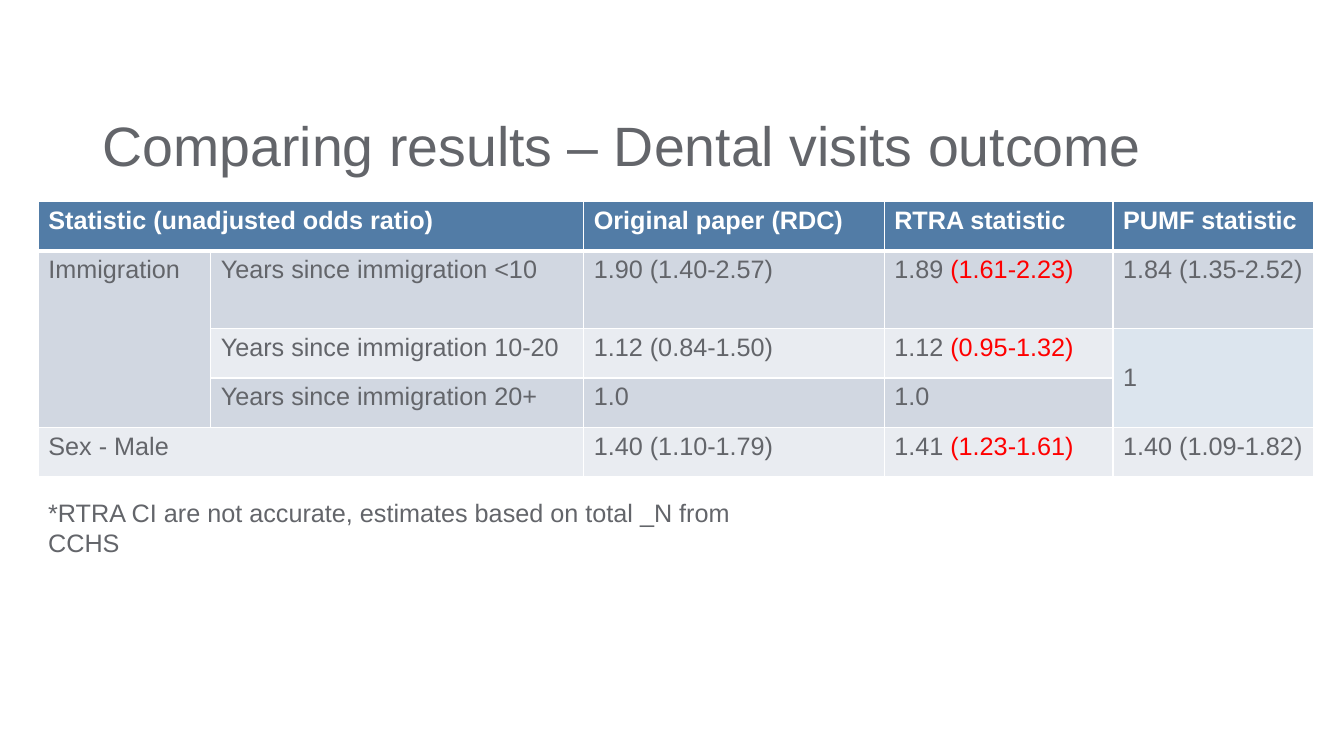
from dataclasses import dataclass

from lxml.etree import SubElement
from pptx import Presentation
from pptx.dml.color import RGBColor
from pptx.enum.text import MSO_ANCHOR as Anchor
from pptx.oxml.ns import qn
from pptx.util import Inches, Pt

GREY, WHITE, RED = "63656A", "FFFFFF", "FF0000"
HEADER_FILL, DARK_BAND, LIGHT_BAND, MERGED_FILL = "527CA6", "D1D7E1", "E9ECF1", "DCE5EE"

COLUMN_WIDTHS = [1.71, 3.7, 2.98, 2.27, 1.99]
ROW_HEIGHTS = [0.49, 0.77, 0.49, 0.49, 0.49]


@dataclass
class Entry:
    row: int
    col: int
    text: str
    interval: str = ""
    rows: int = 1
    cols: int = 1


@dataclass
class Caption:
    text: str
    box: tuple[float, float, float, float]
    size: float
    anchor: Anchor
    line_spacing: float


ENTRIES = [
    Entry(0, 0, "Statistic (unadjusted odds ratio)", cols=2),
    Entry(0, 2, "Original paper (RDC)"),
    Entry(0, 3, "RTRA statistic"),
    Entry(0, 4, "PUMF statistic"),
    Entry(1, 0, "Immigration", rows=3),
    Entry(1, 1, "Years since immigration <10"),
    Entry(1, 2, "1.90 (1.40-2.57)"),
    Entry(1, 3, "1.89 ", "(1.61-2.23)"),
    Entry(1, 4, "1.84 (1.35-2.52)"),
    Entry(2, 1, "Years since immigration 10-20"),
    Entry(2, 2, "1.12 (0.84-1.50)"),
    Entry(2, 3, "1.12 ", "(0.95-1.32)"),
    Entry(2, 4, "1", rows=2),
    Entry(3, 1, "Years since immigration 20+"),
    Entry(3, 2, "1.0"),
    Entry(3, 3, "1.0"),
    Entry(4, 0, "Sex - Male", cols=2),
    Entry(4, 2, "1.40 (1.10-1.79)"),
    Entry(4, 3, "1.41 ", "(1.23-1.61)"),
    Entry(4, 4, "1.40 (1.09-1.82)"),
]

CAPTIONS = [
    Caption("Comparing results – Dental visits outcome", (0.92, 1.09, 11.5, 0.76),
            39.6, Anchor.MIDDLE, 0.9),
    Caption("*RTRA CI are not accurate, estimates based on total _N from CCHS",
            (0.38, 4.88, 7.73, 0.4), 18, Anchor.TOP, 1.0),
]


def rgb(color: str) -> RGBColor:
    return RGBColor.from_string(color)


def add_run(paragraph, text: str, color: str, size: float = 18, bold: bool = False) -> None:
    run = paragraph.add_run()
    run.text = text
    for name, value in {"name": "Arial", "size": Pt(size), "bold": bold}.items():
        setattr(run.font, name, value)
    run.font.color.rgb = rgb(color)


def add_caption(slide, caption: Caption) -> None:
    frame = slide.shapes.add_textbox(*map(Inches, caption.box)).text_frame
    for name, value in {"word_wrap": True, "vertical_anchor": caption.anchor}.items():
        setattr(frame, name, value)
    paragraph = frame.paragraphs[0]
    paragraph.line_spacing = caption.line_spacing
    add_run(paragraph, caption.text, GREY, caption.size)


def style_cell(cell, row: int) -> None:
    """Give a cell its white borders, thick under the header, and its band fill."""
    properties = cell._tc.get_or_add_tcPr()
    widths = {"lnL": 1, "lnR": 1, "lnT": 3 if row == 1 else 1, "lnB": 3 if row == 0 else 1}
    for side, width in widths.items():
        border = SubElement(properties, qn(f"a:{side}"), w=str(Pt(width)))
        SubElement(SubElement(border, qn("a:solidFill")), qn("a:srgbClr"), val=WHITE)
    band = DARK_BAND if row % 2 else LIGHT_BAND
    cell.fill.solid()
    cell.fill.fore_color.rgb = rgb(band if row else HEADER_FILL)


def add_odds_table(slide) -> None:
    size = (len(ROW_HEIGHTS), len(COLUMN_WIDTHS))
    area = (0.38, 2, sum(COLUMN_WIDTHS), sum(ROW_HEIGHTS))
    table = slide.shapes.add_table(*size, *map(Inches, area)).table
    for column, width in zip(table.columns, COLUMN_WIDTHS):
        column.width = Inches(width)
    for index, (row, height) in enumerate(zip(table.rows, ROW_HEIGHTS)):
        row.height = Inches(height)
        for cell in row.cells:
            style_cell(cell, index)

    for entry in ENTRIES:
        cell = table.cell(entry.row, entry.col)
        if entry.rows > 1 or entry.cols > 1:
            cell.merge(table.cell(entry.row + entry.rows - 1, entry.col + entry.cols - 1))
        header = entry.row == 0
        paragraph = cell.text_frame.paragraphs[0]
        add_run(paragraph, entry.text, WHITE if header else GREY, bold=header)
        if entry.interval:
            add_run(paragraph, entry.interval, RED)

    reference = table.cell(2, 4)
    reference.vertical_anchor = Anchor.MIDDLE
    reference.fill.fore_color.rgb = rgb(MERGED_FILL)


def main() -> None:
    deck = Presentation()
    deck.slide_width, deck.slide_height = Inches(13.33), Inches(7.5)
    slide = deck.slides.add_slide(deck.slide_layouts[6])
    title, footnote = CAPTIONS
    add_caption(slide, title)
    add_odds_table(slide)
    add_caption(slide, footnote)
    deck.save("out.pptx")


if __name__ == "__main__":
    main()
